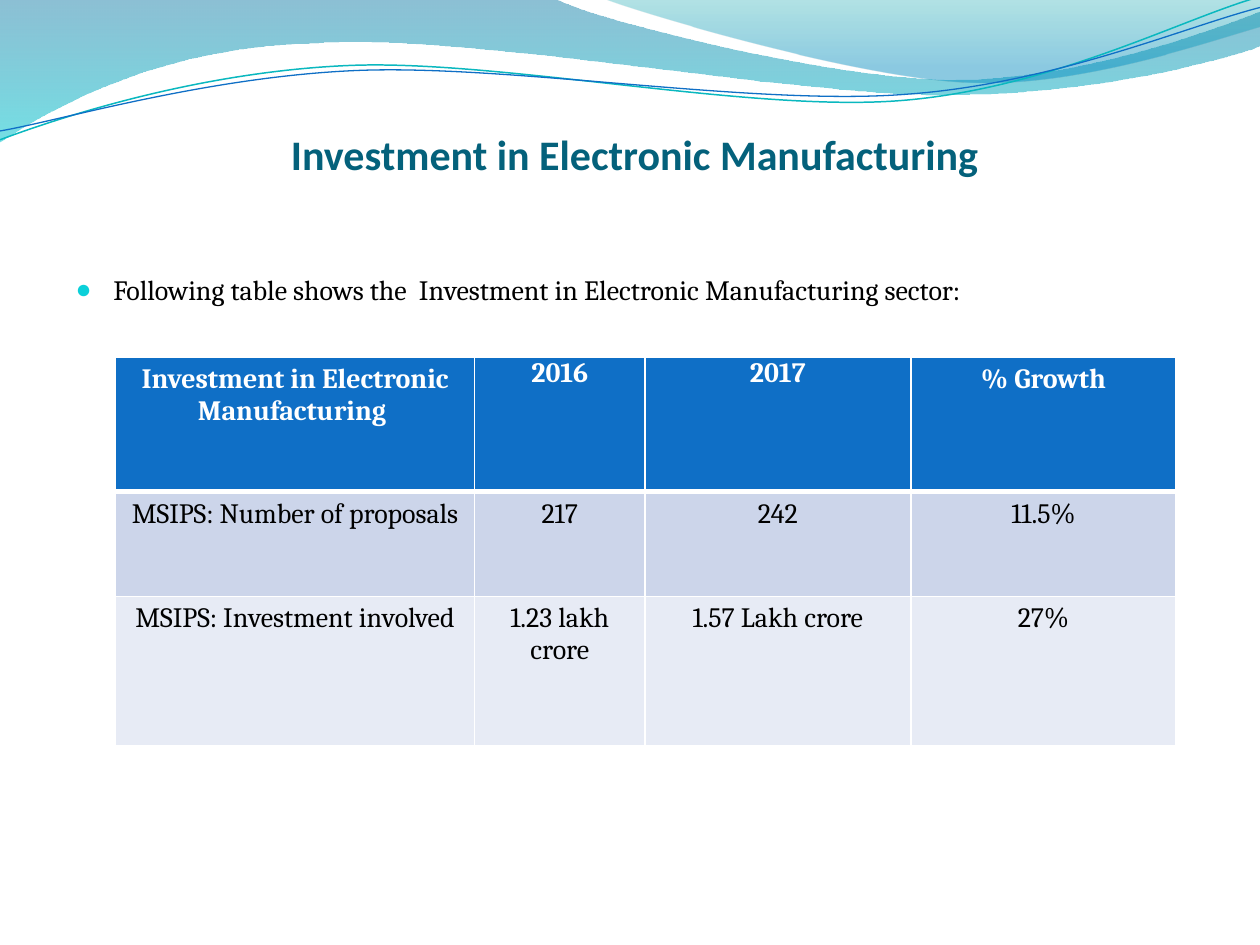
from math import cos, radians, sin

from lxml import etree
from pptx import Presentation
from pptx.dml.color import RGBColor
from pptx.enum.text import MSO_ANCHOR, MSO_AUTO_SIZE, PP_ALIGN
from pptx.oxml import parse_xml
from pptx.oxml.ns import nsdecls, qn
from pptx.util import Cm, Pt

CENTER = PP_ALIGN.CENTER
BOTTOM, TOP = MSO_ANCHOR.BOTTOM, MSO_ANCHOR.TOP
NO_AUTOFIT = MSO_AUTO_SIZE.NONE
INCH = 2.54
WAVE_ANGLE = -2.7
COLORS = {
    "title": "04617B", "text": "000000", "bullet": "0BD0D9", "white": "FFFFFF",
    "header": "0F6FC6", "odd_row": "CCD5EA", "even_row": "E7EBF5",
    "teal_line": "0AB8BF", "blue_line": "0F6FC6",
    "band_top": "0074A1", "band_bottom": "00C6CF",
    "corner_top": "00A1A9", "corner_bottom": "008BBF",
}
BAND = [
    (0, 0), (4.4, -0.01), (4.76, 0.17, 6.64, 0.63, 7.58, 0.63),
    (8.53, 0.63, 9.58, 0.26, 10, 0.09), (10.01, 0.36),
    (9.83, 0.44, 8.7, 0.76, 7.46, 0.75), (6.22, 0.75, 3.82, 0.28, 2.57, 0.34),
    (1.29, 0.36, 0.46, 0.83, -0.01, 1.13), (0, 0),
]
CORNER = [
    (4.79, -0.01), (5.09, 0.11, 6.82, 0.62, 7.69, 0.65),
    (8.56, 0.69, 9.61, 0.32, 10, 0.21), (10, 0), (4.79, -0.01),
]
TEAL_WAVE = [
    (0, 1.11), (0.48, 0.93, 1.58, 0.57, 2.77, 0.52),
    (3.95, 0.47, 5.93, 0.89, 7.13, 0.8), (8.33, 0.71, 9.38, 0.15, 9.98, -0.02),
]
BLUE_WAVE = [
    (0, 1.04), (0.47, 0.96, 1.64, 0.61, 2.83, 0.56),
    (4.03, 0.51, 5.97, 0.84, 7.17, 0.75), (8.36, 0.67, 9.41, 0.21, 10, 0.06),
]
TABLE_ROWS = [
    ["Investment in Electronic Manufacturing ", "2016", "2017", "% Growth"],
    ["MSIPS: Number of proposals", "217", "242", "11.5%"],
    ["MSIPS: Investment involved", "1.23 lakh crore", "1.57 Lakh crore", "27%"],
]
COLUMN_WIDTHS = [7.24, 3.43, 5.36, 5.35]
ROW_HEIGHTS = [2.71, 2.11, 3.02]


def color(name):
    """Return the named colour."""
    return RGBColor.from_string(COLORS[name])


def rotate(x, y, degrees):
    """Turn a point clockwise about the slide's top left corner."""
    angle = radians(degrees)
    return x * cos(angle) - y * sin(angle), x * sin(angle) + y * cos(angle)


def add_outline(slide, segments, close, angle=0):
    """Add a freeform of lines and cubic curves, turned by an angle."""
    outline = []
    for segment in segments:
        points = zip(segment[::2], segment[1::2])
        outline.append([rotate(Cm(x * INCH), Cm(y * INCH), -angle) for x, y in points])
    anchors = [points[-1] for points in outline]
    builder = slide.shapes.build_freeform(*anchors[0])
    builder.add_line_segments(anchors[1:], close=close)
    shape = builder.convert_to_shape()
    lines = list(shape._element.iter(qn("a:lnTo")))
    for line, points in zip(lines, outline[1:]):
        if len(points) == 3:
            curve = etree.Element(qn("a:cubicBezTo"))
            for x, y in points:
                etree.SubElement(curve, qn("a:pt"), x=str(round(x - shape.left)),
                                 y=str(round(y - shape.top)))
            line.getparent().replace(line, curve)
    center = rotate(shape.left + shape.width / 2, shape.top + shape.height / 2, angle)
    shape.left = round(center[0] - shape.width / 2)
    shape.top = round(center[1] - shape.height / 2)
    shape.rotation = angle
    shape.shadow.inherit = False
    return shape


def add_band(slide, segments, stops):
    """Add a closed shape with a translucent vertical gradient."""
    shape = add_outline(slide, segments, True)
    shape.line.fill.background()
    shape.fill.gradient()
    shape.fill.gradient_angle = 270
    for stop, (position, name, opacity) in zip(shape.fill.gradient_stops, stops):
        stop.position = position
        stop.color.rgb = color(name)
        element = stop._gs.find(qn("a:srgbClr"))
        etree.SubElement(element, qn("a:alpha"), val=str(opacity * 1000))


def add_wave(slide, segments, name, width):
    """Add an open curved line."""
    shape = add_outline(slide, segments, False, WAVE_ANGLE)
    shape.fill.background()
    shape.line.color.rgb = color(name)
    shape.line.width = Pt(width)


def place(shape, left, top, width, height):
    """Set position and size in centimetres."""
    shape.left, shape.top, shape.width, shape.height = map(Cm, (left, top, width, height))


def style_paragraph(paragraph, font_name, size, color_name, bold=False):
    """Set the font of a whole paragraph."""
    font = paragraph.font
    font.name, font.size, font.bold = font_name, Pt(size), bold
    font.color.rgb = color(color_name)


def fill_title(title, text):
    """Place and format the title."""
    place(title, 1.27, 0.43, 22.86, 3.18)
    frame = title.text_frame
    frame.text = text
    frame.auto_size = NO_AUTOFIT
    frame.vertical_anchor = BOTTOM
    frame.margin_left = frame.margin_right = frame.margin_bottom = 0
    paragraph = frame.paragraphs[0]
    paragraph.alignment = CENTER
    style_paragraph(paragraph, "Calibri", 24, "title", True)


def fill_body(body, text):
    """Place and format the bullet text."""
    place(body, 1.27, 5.37, 22.86, 12.19)
    frame = body.text_frame
    frame.text = text
    frame.auto_size = NO_AUTOFIT
    paragraph = frame.paragraphs[0]
    properties = paragraph._p.get_or_add_pPr()
    properties.set("marL", str(Cm(0.76)))
    properties.set("indent", str(-Cm(0.76)))
    bullet_color = etree.SubElement(properties, qn("a:buClr"))
    etree.SubElement(bullet_color, qn("a:srgbClr"), val=COLORS["bullet"])
    etree.SubElement(properties, qn("a:buSzPct"), val="95000")
    etree.SubElement(properties, qn("a:buChar"), char="●")
    style_paragraph(paragraph, "Cambria", 16, "text")


def set_borders(cell, top, bottom):
    """Give a cell white borders, with top and bottom widths in points."""
    properties = cell._tc.get_or_add_tcPr()
    sides = (("L", 1), ("R", 1), ("T", top), ("B", bottom))
    for index, (side, width) in enumerate(sides):
        properties.insert(index, parse_xml(
            f'<a:ln{side} {nsdecls("a")} w="{Pt(width)}"><a:solidFill>'
            f'<a:srgbClr val="{COLORS["white"]}"/></a:solidFill></a:ln{side}>'))


def add_investment_table(slide):
    """Add the table of proposals and investment."""
    table = slide.shapes.add_table(
        len(ROW_HEIGHTS), len(COLUMN_WIDTHS), Cm(2.33), Cm(7.2),
        Cm(sum(COLUMN_WIDTHS)), Cm(sum(ROW_HEIGHTS))).table
    for column, width in zip(table.columns, COLUMN_WIDTHS):
        column.width = Cm(width)
    fills = ("header", "odd_row", "even_row")
    for row_index, texts in enumerate(TABLE_ROWS):
        table.rows[row_index].height = Cm(ROW_HEIGHTS[row_index])
        header = row_index == 0
        for column_index, text in enumerate(texts):
            cell = table.cell(row_index, column_index)
            cell.text = text
            cell.vertical_anchor = TOP
            cell.fill.solid()
            cell.fill.fore_color.rgb = color(fills[row_index])
            set_borders(cell, 3 if row_index == 1 else 1, 3 if header else 1)
            if header and column_index in (1, 2):
                cell.margin_left = cell.margin_right = Cm(0.18)
                cell.margin_top = cell.margin_bottom = 0
            paragraph = cell.text_frame.paragraphs[0]
            paragraph.alignment = CENTER
            style_paragraph(paragraph, "Cambria", 16, "white" if header else "text", header)


def main():
    """Build the slide and save it."""
    presentation = Presentation()
    presentation.slide_width, presentation.slide_height = Cm(25.4), Cm(19.05)
    slide = presentation.slides.add_slide(presentation.slide_layouts[1])
    title, body = slide.placeholders
    add_band(slide, BAND, [(0, "band_top", 45), (1, "band_bottom", 55)])
    add_band(slide, CORNER, [(0, "corner_top", 30), (0.8, "corner_bottom", 45)])
    add_wave(slide, TEAL_WAVE, "teal_line", 0.85)
    add_wave(slide, BLUE_WAVE, "blue_line", 0.75)
    fill_title(title, " Investment in Electronic Manufacturing")
    fill_body(body, "Following table shows the  Investment in Electronic Manufacturing sector:")
    for placeholder in (title, body):
        slide.shapes._spTree.append(placeholder._element)
    add_investment_table(slide)
    presentation.save("out.pptx")


if __name__ == "__main__":
    main()
